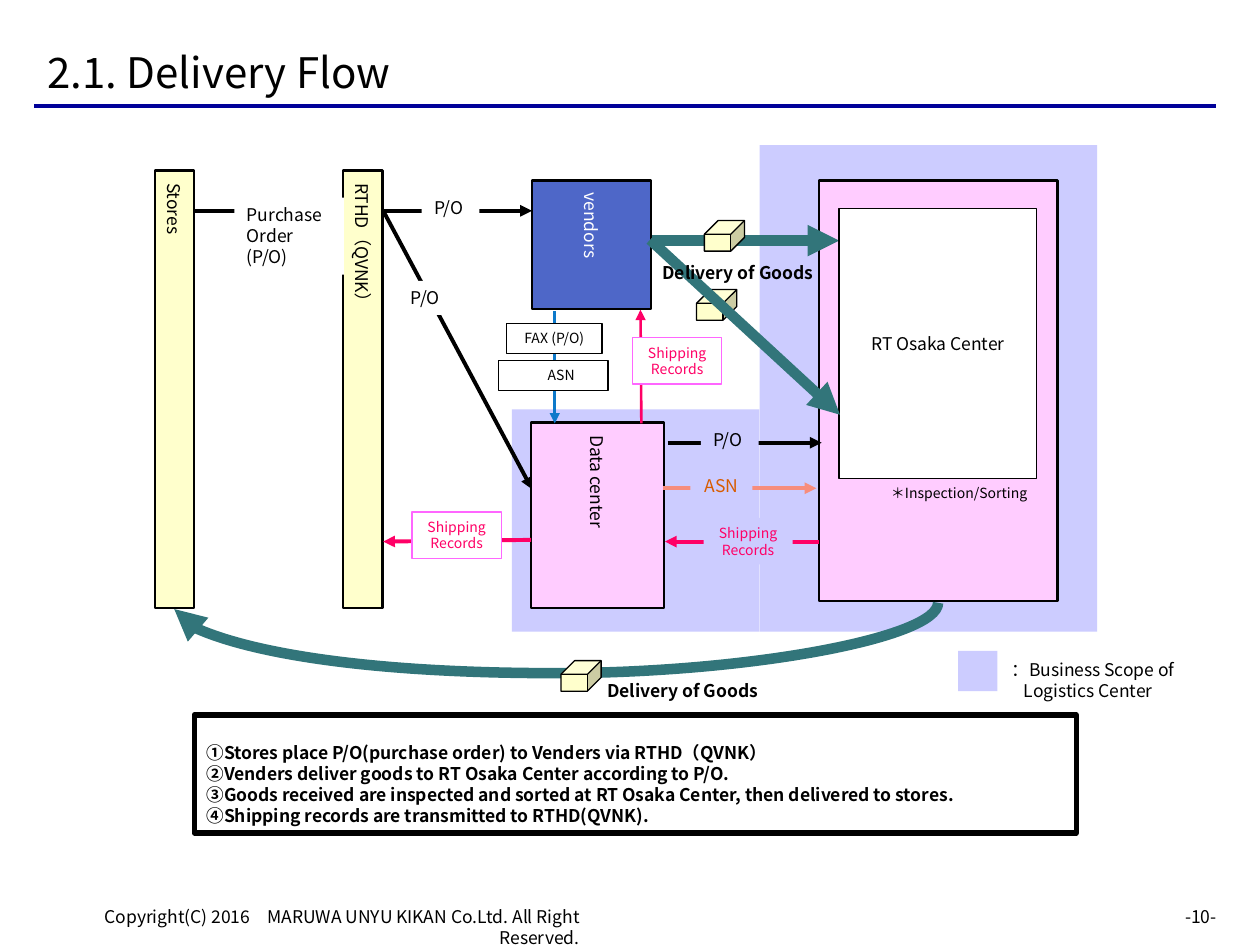
from lxml import etree
from pptx import Presentation
from pptx.dml.color import RGBColor
from pptx.enum import shapes, text
from pptx.oxml.ns import qn
from pptx.util import Pt

COLORS = {
    "black": "000000", "white": "FFFFFF", "navy": "000099", "scope": "CCCCFF",
    "cream": "FFFFCC", "pink": "FFCCFF", "indigo": "4E67C8", "teal": "32757A",
    "blue": "0D79CA", "magenta": "FF0066", "violet": "FF66FF",
    "salmon": "F78D7C", "orange": "D85C00",
}
FONT = "Noto Sans CJK JP"
LEFT, CENTER, RIGHT = text.PP_ALIGN.LEFT, text.PP_ALIGN.CENTER, text.PP_ALIGN.RIGHT
RECT, CUBE = shapes.MSO_SHAPE.RECTANGLE, shapes.MSO_SHAPE.CUBE

deck = Presentation()
deck.slide_width, deck.slide_height = Pt(720), Pt(540)
slide = deck.slides.add_slide(deck.slide_layouts[6])


def box(at, words="", fill=None, line=None, weight=0.75, kind=RECT, size=10, color="black",
        bold=False, align=LEFT, middle=False, vertical=False, wrap=False):
    """Add a filled shape, or a text box when there is no fill; at is left, top, width, height."""
    place = [Pt(length) for length in at]
    if fill:
        shape = slide.shapes.add_shape(kind, *place)
        shape.shadow.inherit = False
        shape.fill.solid()
        shape.fill.fore_color.rgb = RGBColor.from_string(COLORS[fill])
        if line:
            shape.line.color.rgb = RGBColor.from_string(COLORS[line])
            shape.line.width = Pt(weight)
        else:
            shape.line.fill.background()
    else:
        shape = slide.shapes.add_textbox(*place)
    if words:
        frame = shape.text_frame
        frame.text = words
        frame.word_wrap = wrap
        frame.vertical_anchor = text.MSO_ANCHOR.MIDDLE if middle else text.MSO_ANCHOR.TOP
        if vertical:
            frame._txBody.bodyPr.set("vert", "eaVert")
        for paragraph in frame.paragraphs:
            paragraph.alignment = align
            if not vertical:
                paragraph.line_spacing = Pt(size * 1.2)
            for run in paragraph.runs:
                run.font.name, run.font.size, run.font.bold = FONT, Pt(size), bold
                run.font.color.rgb = RGBColor.from_string(COLORS[color])
                east_asian = etree.SubElement(run.font._element, qn("a:ea"))
                east_asian.set("typeface", FONT)
    return shape


def arrow(start, end, color, weight, head=True, kind=shapes.MSO_CONNECTOR.STRAIGHT):
    connector = slide.shapes.add_connector(kind, *[Pt(length) for length in (*start, *end)])
    connector.line.color.rgb = RGBColor.from_string(COLORS[color])
    connector.line.width = Pt(weight)
    if head:
        etree.SubElement(connector.line._get_or_add_ln(), qn("a:tailEnd")).set("type", "triangle")
    etree.SubElement(connector._element.spPr, qn("a:effectLst"))
    return connector


# Title and footer
arrow((19.5, 60.5), (695, 60.5), "navy", 2.25, head=False)
box((20, 21, 612, 40), "2.1. Delivery Flow", size=24, middle=True, wrap=True)
box((25, 514, 313.2, 19.5), "Copyright(C) 2016　MARUWA UNYU KIKAN Co.Ltd. All Right Reserved.",
    align=RIGHT, wrap=True)
box((669, 514, 34.5, 19.5), "-10-", align=CENTER)

# Business scope of the logistics center, with its legend
for scope in [(434, 83, 193, 278), (292.5, 234, 141.5, 127), (547.5, 372, 22.5, 23)]:
    box(scope, fill="scope")
legend = box((571, 373, 113, 31.5), "：Business Scope of\nLogistics Center", "white")
legend.text_frame.paragraphs[1]._p.get_or_add_pPr().set("marL", str(Pt(7)))

# Parties
for at, party, fill in [
    ((88.5, 97.5, 22.5, 250), "Stores", "cream"),
    ((196, 97.5, 22.5, 250), "RTHD（QVNK）", "cream"),
    ((303.5, 241.5, 76, 106), "Data center", "pink"),
    ((468, 103, 136.5, 240.5), "", "pink"),
]:
    box(at, party, fill, "black", 1.5, align=CENTER, middle=True, vertical=True)

# Information flows
for start, end, color, weight in [
    ((111, 120.5), (196, 120.5), "black", 2.25),
    ((219, 120.5), (304, 120.5), "black", 2.25),
    ((219, 120.5), (304, 279.5), "black", 2.25),
    ((317, 178), (317, 242), "blue", 1.5),
    ((366.5, 242), (366, 177), "magenta", 1.5),
    ((381.5, 253), (469.5, 253), "black", 2.25),
    ((379, 279), (466.5, 279), "salmon", 2.25),
    ((468, 309.5), (380, 309.5), "magenta", 2.25),
    ((303.5, 308.5), (219, 309.5), "magenta", 2.25),
]:
    arrow(start, end, color, weight)

# Labels of the information flows
box((134, 113, 62.5, 44), "Purchase\nOrder\n(P/O)", "white")
for left, top, fill in [(241, 109, "white"), (227.5, 160.5, "white"), (400.5, 241.5, "scope")]:
    box((left, top, 33, 19.5), "P/O", fill)
box((394.5, 268, 35.5, 19.5), "ASN", "scope", color="orange", align=CENTER)
box((289.5, 185, 54.5, 17), "FAX (P/O)", "white", "black", size=8, align=CENTER)
notice = box((285, 206, 62.5, 17), "ASN", "white", "black", size=8, align=CENTER)
notice.text_frame.margin_left = Pt(16)
for left, top, fill, line in [
    (235.5, 292.5, "white", "violet"),
    (361.5, 193, "white", "violet"),
    (402, 296, "scope", None),
]:
    box((left, top, 51, 26.5), "Shipping\nRecords", fill, line, size=8,
        color="magenta", align=CENTER)

# Goods flows: the return curve is a quarter-turned connector that bulges far below its ends
arrow((371.5, 137.5), (479.5, 137.5), "teal", 6)
curve = arrow((316, 128), (319.6, 564.5), "teal", 6, kind=shapes.MSO_CONNECTOR.CURVE)
curve._element.spPr.find(qn("a:xfrm")).set("rot", "5400000")
geometry = curve._element.spPr.find(qn("a:prstGeom"))
adjustments = geometry.find(qn("a:avLst"))
if adjustments is None:
    adjustments = etree.SubElement(geometry, qn("a:avLst"))
bulge = etree.SubElement(adjustments, qn("a:gd"))
bulge.set("name", "adj1")
bulge.set("fmla", "val 1117900")

for left, top in [(402.5, 126), (320.5, 377.5), (398, 165.5)]:
    parcel = box((left, top, 23, 17.5), fill="cream", line="black", kind=CUBE)
    parcel.adjustments[0] = 0.45

box((304, 103, 68, 73.5), "vendors", "indigo", "black", 1.5, color="white",
    align=CENTER, middle=True, vertical=True)
box((479.5, 119, 113, 154.5), "RT Osaka Center", "white", "black", align=CENTER, middle=True)
box((502, 273.5, 111.5, 17.5), "＊Inspection/Sorting", size=8, wrap=True)
arrow((371.5, 137), (480, 237), "teal", 6)
for left, top in [(340, 385), (371.5, 146)]:
    box((left, top, 109, 19.5), "Delivery of Goods", bold=True)

# Steps
steps = box((111, 408.5, 504, 67.5), "\n".join([
    "①Stores place P/O(purchase order) to Venders via RTHD（QVNK）",
    "②Venders deliver goods to RT Osaka Center according to P/O.",
    "③Goods received are inspected and sorted at RT Osaka Center, then delivered to stores.",
    "④Shipping records are transmitted to RTHD(QVNK).",
]), "white", "black", 3, bold=True, wrap=True)
steps.text_frame.margin_top = Pt(15.6)

deck.save("out.pptx")
